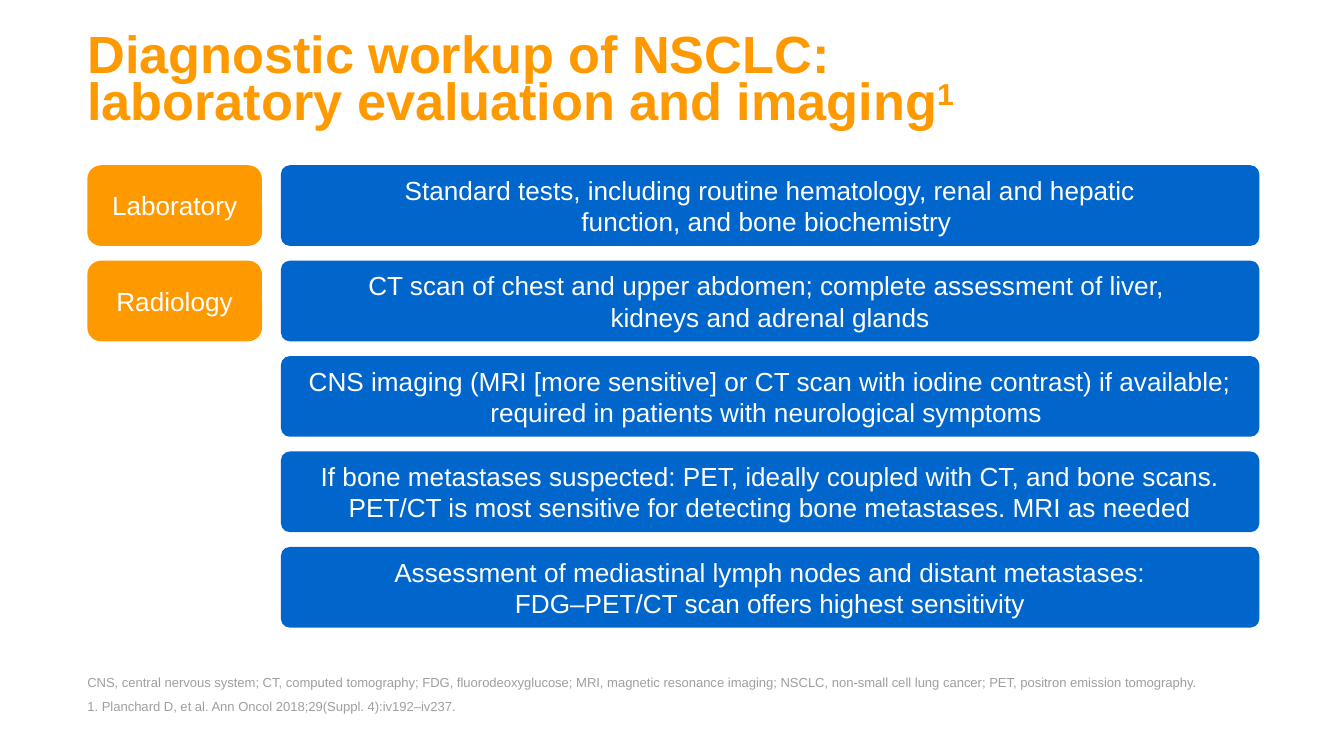
"""Build the slide on the diagnostic workup of NSCLC."""
from pptx import Presentation
from pptx.dml.color import RGBColor
from pptx.enum.shapes import MSO_SHAPE as Shape
from pptx.enum.text import MSO_ANCHOR as Anchor, PP_ALIGN as Align
from pptx.util import Inches, Pt

ORANGE, BLUE, GREY, WHITE = "FF9900", "0066CC", "9E9FA2", "FFFFFF"
SLIDE_WIDTH = 10
LEFT, FIRST_ROW, ROW_STEP, ROW_HEIGHT = 0.65, 1.23, 0.71, 0.6
ROWS = [
    ("Laboratory", "Standard tests, including routine hematology, renal and hepatic\n"
                   "function, and bone biochemistry "),
    ("Radiology", "CT scan of chest and upper abdomen; complete assessment of liver, \v"
                  "kidneys and adrenal glands"),
    (None, "CNS imaging (MRI [more sensitive] or CT scan with iodine contrast) "
           "if available; required in patients with neurological symptoms "),
    (None, "If bone metastases suspected: PET, ideally coupled with CT, and bone scans. "
           "PET/CT is most sensitive for detecting bone metastases. MRI as needed"),
    (None, "Assessment of mediastinal lymph nodes and distant metastases:\n"
           "FDG–PET/CT scan offers highest sensitivity"),
]
ABBREVIATIONS = (
    "CNS, central nervous system; CT, computed tomography; FDG, fluorodeoxyglucose; "
    "MRI, magnetic resonance imaging; NSCLC, non-small cell lung cancer; "
    "PET, positron emission tomography."
)
REFERENCE = "1. Planchard D, et al. Ann Oncol 2018;29(Suppl. 4):iv192–iv237."


def color(hex_code):
    return RGBColor.from_string(hex_code)


def style_run(run, size, hex_code, bold=False):
    run.font.name = "Arial"
    run.font.size = Pt(size)
    run.font.bold = bold
    run.font.color.rgb = color(hex_code)


def write(frame, text, size, hex_code, anchor, margins, align=Align.LEFT, bold=False):
    frame.text = text
    frame.word_wrap = True
    frame.vertical_anchor = anchor
    frame.margin_left = frame.margin_right = Inches(margins[0])
    frame.margin_top = frame.margin_bottom = Inches(margins[1])
    for paragraph in frame.paragraphs:
        paragraph.alignment = align
        for run in paragraph.runs:
            style_run(run, size, hex_code, bold)


def add_text(slide, box, text, size, hex_code, anchor, bold=False):
    frame = slide.shapes.add_textbox(*map(Inches, box)).text_frame
    write(frame, text, size, hex_code, anchor, (0, 0), bold=bold)
    return frame.paragraphs[0]


def add_card(slide, left, top, width, text, fill, side_margin, rounding):
    card = slide.shapes.add_shape(
        Shape.ROUNDED_RECTANGLE, *map(Inches, (left, top, width, ROW_HEIGHT)))
    card.adjustments[0] = rounding
    card.shadow.inherit = False
    card.fill.solid()
    card.fill.fore_color.rgb = color(fill)
    card.line.fill.background()
    write(card.text_frame, text, 14, WHITE, Anchor.MIDDLE, (side_margin, 0.05), Align.CENTER)


def add_title(slide):
    title = add_text(slide, (LEFT, 0.3, 7.56, 0.64),
                     "Diagnostic workup of NSCLC: \vlaboratory evaluation and imaging",
                     28, ORANGE, Anchor.MIDDLE, bold=True)
    title.line_spacing = 0.75
    citation = title.add_run()
    citation.text = "1"
    style_run(citation, 28, ORANGE, True)
    citation.font._element.set("baseline", "30000")


def add_footnotes(slide):
    abbreviations = add_text(slide, (LEFT, 4.81, 8.47, 0.33), ABBREVIATIONS,
                             7, GREY, Anchor.BOTTOM)
    abbreviations.line_spacing = 0.9
    abbreviations.space_before = abbreviations.space_after = Pt(6)
    add_text(slide, (LEFT, 5.2, 8.72, 0.4), REFERENCE, 7, GREY, Anchor.TOP)


def main():
    deck = Presentation()
    deck.slide_width = Inches(SLIDE_WIDTH)
    deck.slide_height = Inches(SLIDE_WIDTH * 9 / 16)
    slide = deck.slides.add_slide(deck.slide_layouts[6])
    add_title(slide)
    for index, (category, tests) in enumerate(ROWS):
        top = FIRST_ROW + index * ROW_STEP
        add_card(slide, 2.09, top, 7.28, tests, BLUE, 0.1, 0.11)
        if category:
            add_card(slide, LEFT, top, 1.3, category, ORANGE, 0.05, 0.17)
    add_footnotes(slide)
    deck.save("out.pptx")


if __name__ == "__main__":
    main()
